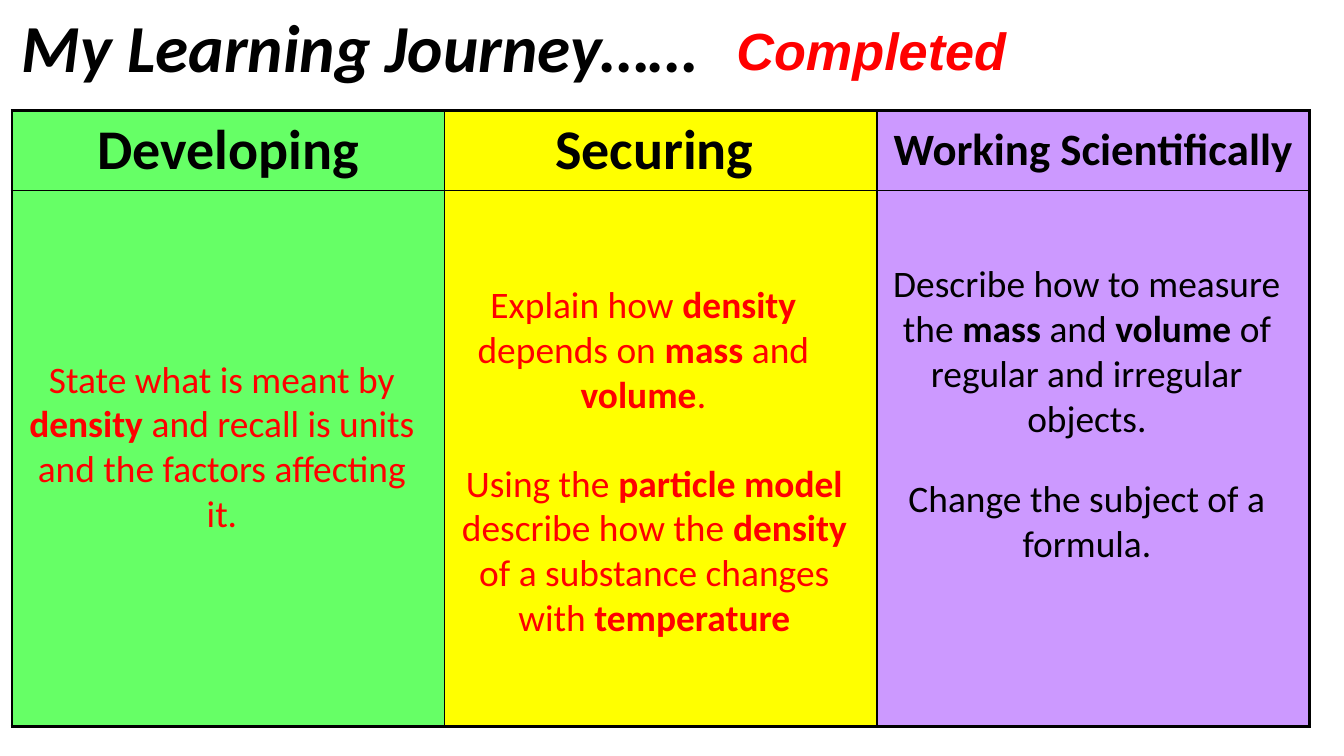
from lxml import etree
from pptx import Presentation
from pptx.dml.color import RGBColor
from pptx.enum import text
from pptx.oxml import ns
from pptx.util import Cm, Pt

BLACK = RGBColor(0x00, 0x00, 0x00)
RED = RGBColor(0xFF, 0x00, 0x00)
GREEN = RGBColor(0x66, 0xFF, 0x66)
YELLOW = RGBColor(0xFF, 0xFF, 0x00)
PURPLE = RGBColor(0xCC, 0x99, 0xFF)

COLUMNS = [("Developing", 40, GREEN), ("Securing ", 40, YELLOW),
           ("Working Scientifically", 32, PURPLE)]
ROW_HEIGHTS = [Cm(2.01), Cm(13.51)]
COLUMN_WIDTH = Cm(10.9)
OUTER, INNER = Pt(2.25), Pt(1)

# Left, top and height in cm, colour, then runs: plain and bold in turn
OBJECTIVES = [
    (0.3, 8.84, 4.83, RED, ["State what is meant by ", "density ",
                            "and recall is units and the factors affecting it."]),
    (10.92, 6.96, 3.68, RED, ["Explain how ", "density", " depends on ", "mass",
                              " and ", "volume", "."]),
    (11.2, 11.46, 4.83, RED, ["Using the ", "particle model ", "describe how the ", "density ",
                              "of a substance changes with ", "temperature"]),
    (22.1, 6.43, 4.83, BLACK, ["Describe how to measure the ", "mass", " and ", "volume",
                               " of regular and irregular objects."]),
    (22.1, 11.84, 2.54, BLACK, ["Change the subject of a formula."]),
]


def add_run(paragraph, words, size, color, bold=True, italic=False, font="Calibri"):
    run = paragraph.add_run()
    run.text = words
    run.font.name = font
    run.font.size = Pt(size)
    run.font.bold = bold
    run.font.italic = italic
    run.font.color.rgb = color


def set_borders(cell, widths):
    """Draw black borders; widths are left, right, top, bottom."""
    properties = cell._tc.get_or_add_tcPr()
    for index, (side, width) in enumerate(zip("LRTB", widths)):
        line = etree.Element(ns.qn(f"a:ln{side}"), w=str(int(width)))
        fill = etree.SubElement(line, ns.qn("a:solidFill"))
        etree.SubElement(fill, ns.qn("a:srgbClr"), val=str(BLACK))
        properties.insert(index, line)


presentation = Presentation()
presentation.slide_width = Cm(33.87)
presentation.slide_height = Cm(19.05)
slide = presentation.slides.add_slide(presentation.slide_layouts[5])

title = slide.shapes.title
title.left, title.top, title.width, title.height = Cm(0.3), Cm(0), Cm(24.31), Cm(4.7)
title.text_frame.auto_size = text.MSO_AUTO_SIZE.NONE
title.text_frame.vertical_anchor = text.MSO_ANCHOR.TOP
paragraph = title.text_frame.paragraphs[0]
paragraph.alignment = text.PP_ALIGN.LEFT
add_run(paragraph, "My Learning Journey……", 48, BLACK, italic=True)

table = slide.shapes.add_table(len(ROW_HEIGHTS), len(COLUMNS), Cm(0.3), Cm(2.79),
                               COLUMN_WIDTH * len(COLUMNS), sum(ROW_HEIGHTS)).table
table.first_row = False
table.horz_banding = False
for row, height in zip(table.rows, ROW_HEIGHTS):
    row.height = height
for column, (heading, size, color) in enumerate(COLUMNS):
    table.columns[column].width = COLUMN_WIDTH
    for row in range(len(ROW_HEIGHTS)):
        cell = table.cell(row, column)
        cell.fill.solid()
        cell.fill.fore_color.rgb = color
        edges = [column == 0, column == len(COLUMNS) - 1, row == 0, row == len(ROW_HEIGHTS) - 1]
        set_borders(cell, [OUTER if edge else INNER for edge in edges])
    header = table.cell(0, column)
    header.vertical_anchor = text.MSO_ANCHOR.MIDDLE
    paragraph = header.text_frame.paragraphs[0]
    paragraph.alignment = text.PP_ALIGN.CENTER
    add_run(paragraph, heading, size, BLACK)

for left, top, height, color, runs in OBJECTIVES:
    box = slide.shapes.add_textbox(Cm(left), Cm(top), Cm(10.59), Cm(height))
    box.text_frame.word_wrap = True
    paragraph = box.text_frame.paragraphs[0]
    paragraph.alignment = text.PP_ALIGN.CENTER
    for index, words in enumerate(runs):
        add_run(paragraph, words, 26.7, color, bold=index % 2 == 1)

status = slide.shapes.add_textbox(Cm(18.31), Cm(0.33), Cm(9.25), Cm(1.85))
status.text_frame.word_wrap = True
add_run(status.text_frame.paragraphs[0], "Completed", 37.3, RED, italic=True, font="Arial")

presentation.save("out.pptx")
